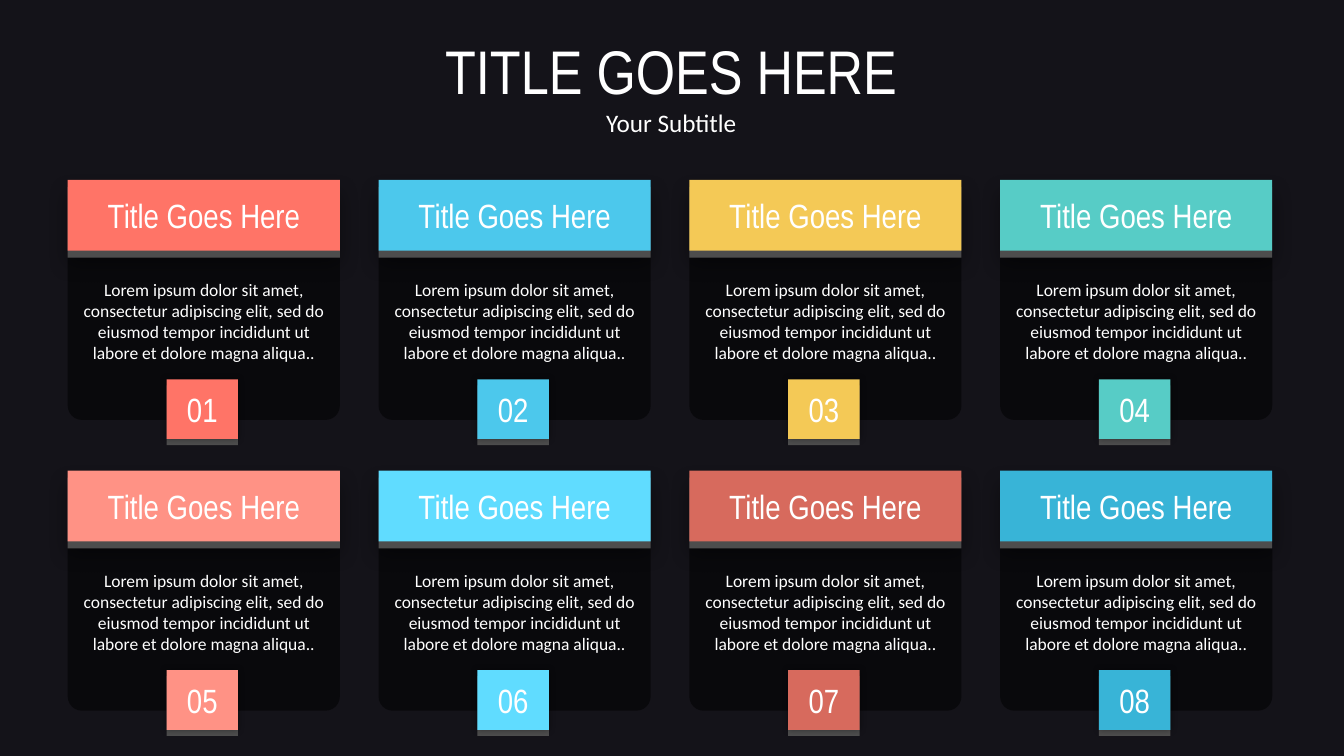
from dataclasses import dataclass

from lxml import etree
from pptx import Presentation
from pptx.dml.color import RGBColor
from pptx.enum.shapes import MSO_SHAPE
from pptx.enum.text import MSO_ANCHOR, PP_ALIGN
from pptx.oxml.ns import qn
from pptx.shapes.autoshape import Shape
from pptx.shapes.shapetree import GroupShapes, SlideShapes
from pptx.util import Pt

RECTANGLE = MSO_SHAPE.RECTANGLE
ROUND_TWO_CORNERS = MSO_SHAPE.ROUND_2_SAME_RECTANGLE
MIDDLE = MSO_ANCHOR.MIDDLE
CENTER = PP_ALIGN.CENTER

SLIDE_WIDTH, SLIDE_HEIGHT = 960, 540
HEADING_FONT, BODY_FONT = "Arial Narrow", "Calibri"
WHITE, BLACK, LEDGE_GREY, BACKDROP = "FFFFFF", "000000", "4D4D4D", "524E67"

COLUMNS = 4
GRID_LEFT, GRID_TOP = 48.4, 128.4
COLUMN_PITCH, ROW_PITCH = 222, 207.7
CARD_WIDTH = 194.4
HEADER_HEIGHT = 50.6
BADGE_WIDTH, BADGE_HEIGHT = 51, 42.6

CARD_TITLE = "Title Goes Here"
CARD_BODY = (
    "Lorem ipsum dolor sit amet, consectetur adipiscing elit, sed do "
    "eiusmod tempor incididunt ut labore et dolore magna aliqua.."
)
CARD_COLORS = (
    "FF7467", "4CC8EC", "F4C956", "57CCC6",
    "FF9285", "60DCFF", "D76A5D", "38B4D7",
)

Shapes = SlideShapes | GroupShapes


@dataclass(frozen=True)
class Box:
    left: float
    top: float
    width: float
    height: float

    def lengths(self) -> tuple[Pt, Pt, Pt, Pt]:
        return Pt(self.left), Pt(self.top), Pt(self.width), Pt(self.height)


@dataclass(frozen=True)
class TextLine:
    text: str
    size: float
    font: str


@dataclass(frozen=True)
class Shadow:
    blur: float
    distance: float
    degrees: int


@dataclass(frozen=True)
class Card:
    number: str
    color: str
    left: float
    top: float


HEADER_SHADOW = Shadow(15, 4, 90)
BADGE_SHADOW = Shadow(5, 0, 0)


def rgb(color: str) -> RGBColor:
    return RGBColor.from_string(color)


def set_opacity(shape: Shape, percent: int) -> None:
    color = shape.fill._xPr.find(qn("a:solidFill"))[0]
    etree.SubElement(color, qn("a:alpha"), val=str(percent * 1000))


def cast_shadow(shape: Shape, shadow: Shadow) -> None:
    effects = shape._element.spPr.find(qn("a:effectLst"))
    outer = etree.SubElement(
        effects, qn("a:outerShdw"),
        blurRad=str(Pt(shadow.blur)), dist=str(Pt(shadow.distance)),
        dir=str(shadow.degrees * 60000), algn="ctr", rotWithShape="0",
    )
    color = etree.SubElement(outer, qn("a:srgbClr"), val=BLACK)
    etree.SubElement(color, qn("a:alpha"), val="40000")


def write_lines(shape: Shape, lines: list[TextLine]) -> None:
    frame = shape.text_frame
    frame.word_wrap = True
    for index, line in enumerate(lines):
        paragraph = frame.add_paragraph() if index else frame.paragraphs[0]
        paragraph.text = line.text
        paragraph.alignment = CENTER
        paragraph.font.size = Pt(line.size)
        paragraph.font.name = line.font
        paragraph.font.color.rgb = rgb(WHITE)


def add_text(shapes: Shapes, box: Box, lines: list[TextLine]) -> None:
    write_lines(shapes.add_textbox(*box.lengths()), lines)


def add_panel(shapes: Shapes, box: Box, color: str,
              kind: MSO_SHAPE = RECTANGLE) -> Shape:
    panel = shapes.add_shape(kind, *box.lengths())
    panel.shadow.inherit = False
    panel.fill.solid()
    panel.fill.fore_color.rgb = rgb(color)
    panel.line.fill.background()
    return panel


def add_label(shapes: Shapes, box: Box, color: str, text: str) -> Shape:
    label = add_panel(shapes, box, color)
    write_lines(label, [TextLine(text, 24, HEADING_FONT)])
    label.text_frame.vertical_anchor = MIDDLE
    return label


def draw_card(slide_shapes: SlideShapes, card: Card) -> None:
    left, top = card.left, card.top
    content = slide_shapes.add_group_shape().shapes
    body = add_panel(content, Box(left, top + 55.6, CARD_WIDTH, 116),
                     BLACK, ROUND_TWO_CORNERS)
    body.adjustments[0] = 0
    body.adjustments[1] = 0.088
    set_opacity(body, 50)
    ledge = add_panel(content, Box(left, top + 5, CARD_WIDTH, HEADER_HEIGHT),
                      LEDGE_GREY)
    cast_shadow(ledge, HEADER_SHADOW)
    add_label(content, Box(left, top, CARD_WIDTH, HEADER_HEIGHT),
              card.color, CARD_TITLE)
    add_text(content, Box(left, top + 67.5, CARD_WIDTH, 68),
             [TextLine(CARD_BODY, 12.5, BODY_FONT)])

    badge_left, badge_top = left + 70.6, top + 142.6
    badge_group = slide_shapes.add_group_shape().shapes
    add_panel(badge_group,
              Box(badge_left, badge_top + 4.3, BADGE_WIDTH, BADGE_HEIGHT),
              LEDGE_GREY)
    badge = add_label(badge_group,
                      Box(badge_left, badge_top, BADGE_WIDTH, BADGE_HEIGHT),
                      card.color, card.number)
    cast_shadow(badge, BADGE_SHADOW)


def main() -> None:
    deck = Presentation()
    deck.slide_width, deck.slide_height = Pt(SLIDE_WIDTH), Pt(SLIDE_HEIGHT)
    slide = deck.slides.add_slide(deck.slide_layouts[6])
    slide.background.fill.solid()
    slide.background.fill.fore_color.rgb = rgb(BACKDROP)
    shade = add_panel(slide.shapes, Box(0, 0, SLIDE_WIDTH, SLIDE_HEIGHT), BLACK)
    set_opacity(shade, 75)

    add_text(slide.shapes, Box(262.8, 20.2, 433.4, 82), [
        TextLine("TITLE GOES HERE", 44, HEADING_FONT),
        TextLine("Your Subtitle", 18, BODY_FONT),
    ])
    for index, color in enumerate(CARD_COLORS):
        row, column = divmod(index, COLUMNS)
        draw_card(slide.shapes, Card(
            f"{index + 1:02}", color,
            GRID_LEFT + column * COLUMN_PITCH, GRID_TOP + row * ROW_PITCH,
        ))
    deck.save("out.pptx")


if __name__ == "__main__":
    main()
